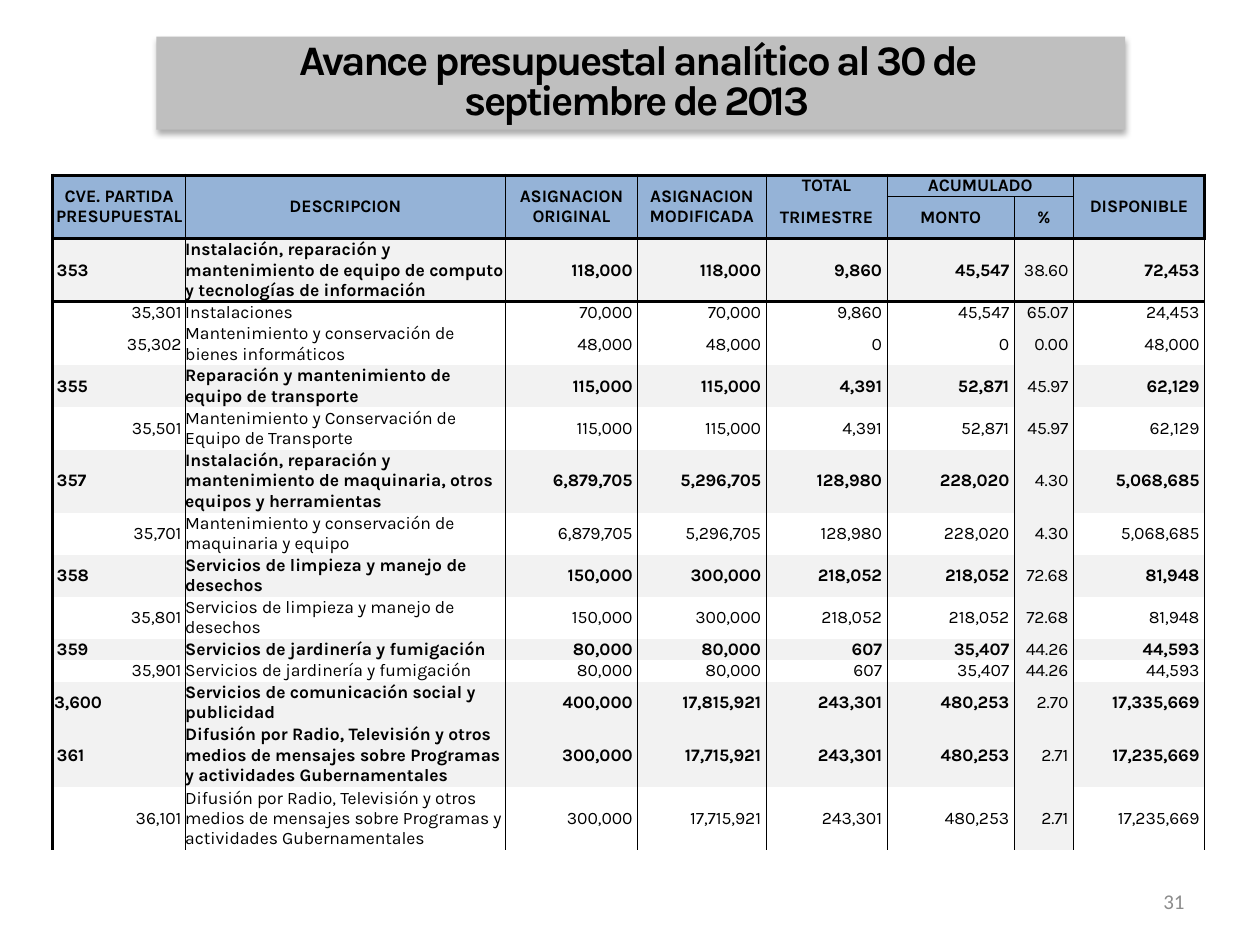
from lxml import etree
from pptx import Presentation
from pptx.dml.color import RGBColor
from pptx.enum.shapes import MSO_SHAPE
from pptx.enum.text import MSO_ANCHOR, PP_ALIGN
from pptx.oxml import parse_xml
from pptx.oxml.ns import nsdecls, qn
from pptx.util import Inches, Pt

LEFT, CENTER, RIGHT = PP_ALIGN.LEFT, PP_ALIGN.CENTER, PP_ALIGN.RIGHT
MIDDLE = MSO_ANCHOR.MIDDLE
RECTANGLE = MSO_SHAPE.RECTANGLE
NO_GRID_STYLE = "{2D5ABB26-0587-4C30-8999-92F81FD0307C}"
THIN, THICK = 0.5, 2
COLUMNS = [1.05, 2.54, 1.05, 1.02, 0.96, 1.01, 0.47, 1.04]
LINE_HEIGHTS = {1: 0.17, 2: 0.33, 3: 0.5}
PERCENT, LAST = 6, 7

HEADERS = [
    ["CVE. PARTIDA PRESUPUESTAL", "DESCRIPCION", "ASIGNACION ORIGINAL",
     "ASIGNACION MODIFICADA", "TOTAL", "ACUMULADO", "", "DISPONIBLE"],
    ["", "", "", "", "TRIMESTRE", "MONTO", "%", ""],
]
RADIO = ("Difusión por Radio, Televisión y otros medios de mensajes sobre "
         "Programas y actividades Gubernamentales")
# Lines of text in the row, code, description, then the figures
ITEMS = [
    (3, "353", "Instalación, reparación y mantenimiento de equipo de computo y "
     "tecnologías de información", "118,000 118,000 9,860 45,547 38.60 72,453"),
    (1, "35,301", "Instalaciones", "70,000 70,000 9,860 45,547 65.07 24,453"),
    (2, "35,302", "Mantenimiento y conservación de bienes informáticos",
     "48,000 48,000 0 0 0.00 48,000"),
    (2, "355", "Reparación y mantenimiento de equipo de transporte",
     "115,000 115,000 4,391 52,871 45.97 62,129"),
    (2, "35,501", "Mantenimiento y Conservación de Equipo de Transporte",
     "115,000 115,000 4,391 52,871 45.97 62,129"),
    (3, "357", "Instalación, reparación y mantenimiento de maquinaria, otros equipos "
     "y herramientas", "6,879,705 5,296,705 128,980 228,020 4.30 5,068,685"),
    (2, "35,701", "Mantenimiento y conservación de maquinaria y equipo",
     "6,879,705 5,296,705 128,980 228,020 4.30 5,068,685"),
    (2, "358", "Servicios de limpieza y manejo de desechos",
     "150,000 300,000 218,052 218,052 72.68 81,948"),
    (2, "35,801", "Servicios de limpieza y manejo de desechos",
     "150,000 300,000 218,052 218,052 72.68 81,948"),
    (1, "359", "Servicios de jardinería y fumigación",
     "80,000 80,000 607 35,407 44.26 44,593"),
    (1, "35,901", "Servicios de jardinería y fumigación",
     "80,000 80,000 607 35,407 44.26 44,593"),
    (2, "3,600", "Servicios de comunicación social y publicidad",
     "400,000 17,815,921 243,301 480,253 2.70 17,335,669"),
    (3, "361", RADIO, "300,000 17,715,921 243,301 480,253 2.71 17,235,669"),
    (3, "36,101", RADIO, "300,000 17,715,921 243,301 480,253 2.71 17,235,669"),
]


def color(hex_code):
    return RGBColor.from_string(hex_code)


def write(frame, text, align, hex_code="000000", **font_values):
    para = frame.paragraphs[0]
    para.alignment = align
    span = para.add_run()
    span.text = text
    span.font.color.rgb = color(hex_code)
    for name, value in font_values.items():
        setattr(span.font, name, value)
    return para


deck = Presentation()
deck.slide_width, deck.slide_height = Inches(10), Inches(7.5)
page = deck.slides.add_slide(deck.slide_layouts[0])
title, subtitle = page.placeholders
subtitle.element.getparent().remove(subtitle.element)

# Grey band behind the title, with a soft shadow below
band = page.shapes.add_shape(RECTANGLE, Inches(1.24), Inches(0.29), Inches(7.69), Inches(0.74))
band.fill.solid()
band.fill.fore_color.rgb = color("BFBFBF")
band.line.fill.background()
band.shadow.inherit = False
band.element.spPr.find(qn("a:effectLst")).append(parse_xml(
    f'<a:outerShdw {nsdecls("a")} blurRad="{Pt(3.5)}" dist="{Pt(2.2)}" dir="5400000" '
    'rotWithShape="0"><a:srgbClr val="000000"><a:alpha val="32000"/></a:srgbClr></a:outerShdw>'))
title.element.addprevious(band.element)

# Title
title.left, title.top, title.width, title.height = map(Inches, (1.77, 0.3, 6.57, 0.73))
title.text_frame.vertical_anchor = MIDDLE
heading = write(title.text_frame, "Avance presupuestal analítico al 30 de septiembre de 2013",
                CENTER, name="Karla", size=Pt(24), bold=True)
heading.line_spacing = Pt(23)
heading.runs[0].font._element.set("spc", "-150")

# Page number
box = page.shapes.add_textbox(Inches(7.17), Inches(6.95), Inches(2.33), Inches(0.4))
box.text_frame.word_wrap = True
box.text_frame.vertical_anchor = MIDDLE
write(box.text_frame, "31", RIGHT, "8C8C8C", name="Calibri", size=Pt(12))

# Budget table
rows = HEADERS + [[code, text, *figures.split()] for _, code, text, figures in ITEMS]
heights = [LINE_HEIGHTS[lines] for lines in (1, 2, *(item[0] for item in ITEMS))]
holder = page.shapes.add_table(len(rows), len(COLUMNS), Inches(0.42), Inches(1.39),
                               Inches(sum(COLUMNS)), Inches(sum(heights)))
table = holder.table
table.first_row = table.horz_banding = False
table._tbl.tblPr.find(qn("a:tableStyleId")).text = NO_GRID_STYLE
for column, width in zip(table.columns, COLUMNS):
    column.width = Inches(width)
for row, height in zip(table.rows, heights):
    row.height = Inches(height)

# Header cells that span two rows or two columns
two_row_columns = (0, 1, 2, 3, LAST)
for c in two_row_columns:
    table.cell(0, c).merge(table.cell(1, c))
table.cell(0, 5).merge(table.cell(0, PERCENT))

for r, values in enumerate(rows):
    is_header = r < len(HEADERS)
    is_group = not is_header and len(values[0]) < 6
    for c, text in enumerate(values):
        cell = table.cell(r, c)

        # Borders
        borders = {"lnL": THICK if c == 0 else THIN,
                   "lnR": THICK if is_header and c == LAST else THIN}
        if r in (0, 2):
            borders["lnT"] = THICK
        elif r == 1 and c in (5, PERCENT):
            borders["lnT"] = THIN
        if r == 1 or (r == 0 and c in two_row_columns):
            borders["lnB"] = THICK
        elif r == 0 and c in (5, PERCENT):
            borders["lnB"] = THIN
        properties = cell._tc.get_or_add_tcPr()
        for side, points in borders.items():
            line = etree.SubElement(properties, qn(f"a:{side}"), w=str(Pt(points)))
            fill = etree.SubElement(line, qn("a:solidFill"))
            etree.SubElement(fill, qn("a:srgbClr"), val="000000")

        # Fill
        if is_header or is_group or c == PERCENT:
            cell.fill.solid()
            cell.fill.fore_color.rgb = color("95B3D7" if is_header else "F2F2F2")
        else:
            cell.fill.background()

        # Alignment and text
        left_gap = right_gap = 0
        if is_header:
            align = CENTER
        elif c == 1 or (c == 0 and is_group):
            align = LEFT
            if c == 0:
                left_gap = 0.01 if text == "3,600" else 0.03
        else:
            align = RIGHT
            right_gap = 0.03 if c == 0 else 0.04
        cell.margin_left, cell.margin_right = Inches(left_gap), Inches(right_gap)
        cell.margin_top = cell.margin_bottom = 0
        cell.vertical_anchor = MIDDLE
        if text:
            write(cell.text_frame, text, align, name="Karla", size=Pt(10),
                  bold=is_header or (is_group and c != PERCENT))

deck.save("out.pptx")
